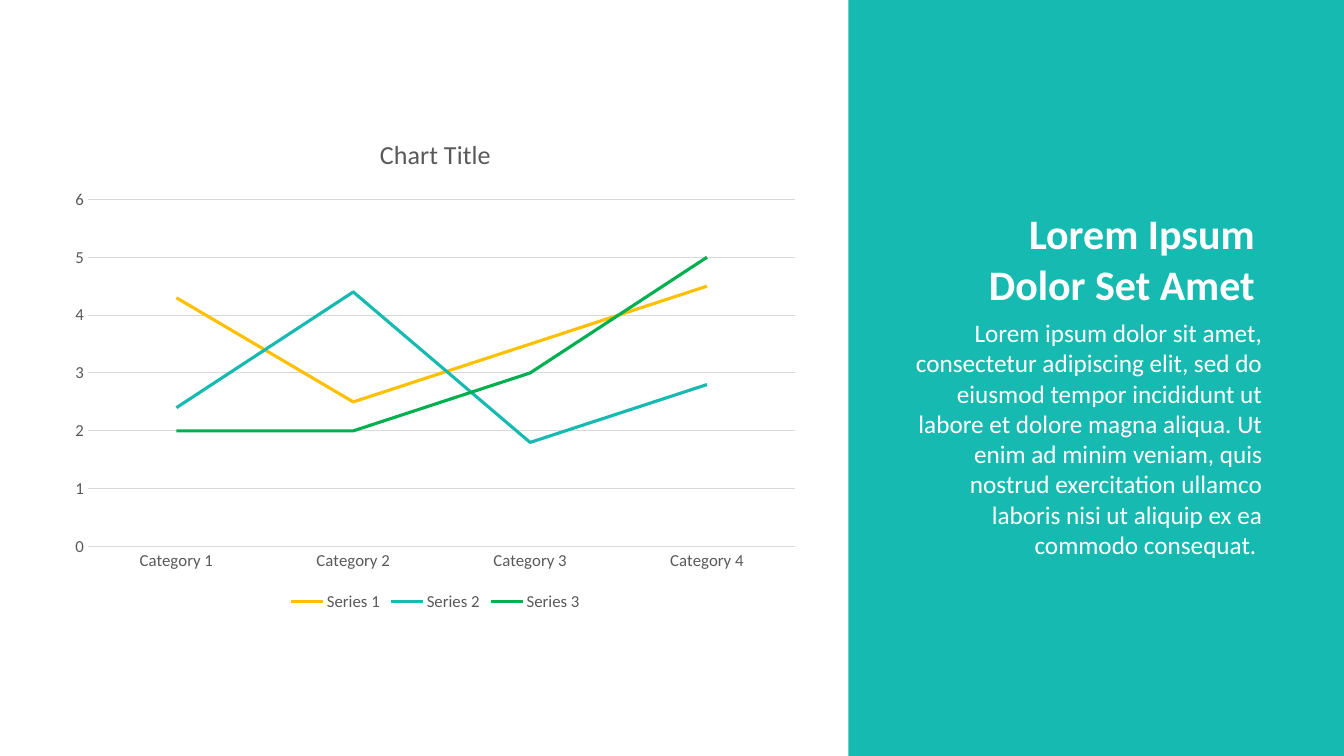
from pptx import Presentation
from pptx.chart.data import CategoryChartData
from pptx.dml.color import RGBColor
from pptx.enum.chart import XL_CHART_TYPE, XL_LEGEND_POSITION, XL_TICK_MARK
from pptx.enum.shapes import MSO_SHAPE
from pptx.enum.text import MSO_ANCHOR, MSO_AUTO_SIZE, PP_ALIGN
from pptx.util import Pt

LINE_CHART = XL_CHART_TYPE.LINE
LEGEND_BOTTOM = XL_LEGEND_POSITION.BOTTOM
NO_TICKS = XL_TICK_MARK.NONE
RECTANGLE = MSO_SHAPE.RECTANGLE
TOP = MSO_ANCHOR.TOP
FIT_SHAPE = MSO_AUTO_SIZE.SHAPE_TO_FIT_TEXT
RIGHT = PP_ALIGN.RIGHT

FONT = "Calibri"
COLORS = {
    "teal": "17BAB1",
    "yellow": "FFC000",
    "green": "00B050",
    "white": "FFFFFF",
    "label": "595959",
    "grid": "D9D9D9",
}
SLIDE_WIDTH, SLIDE_HEIGHT = 960, 540
PANEL_LEFT = 606

CATEGORIES = [f"Category {number}" for number in range(1, 5)]
SERIES = [
    ("Series 1", (4.3, 2.5, 3.5, 4.5), "yellow"),
    ("Series 2", (2.4, 4.4, 1.8, 2.8), "teal"),
    ("Series 3", (2, 2, 3, 5), "green"),
]
HEADING = ["Lorem Ipsum", "Dolor Set Amet"]
BODY = [
    "Lorem ipsum dolor sit amet, consectetur adipiscing elit, sed do eiusmod "
    "tempor incididunt ut labore et dolore magna aliqua. Ut enim ad minim "
    "veniam, quis nostrud exercitation ullamco laboris nisi ut aliquip ex ea "
    "commodo consequat. "
]


def rgb(name):
    return RGBColor.from_string(COLORS[name])


def style_font(font, size, color, bold=False):
    font.name = FONT
    font.size = Pt(size)
    font.bold = bold
    font.color.rgb = rgb(color)


def style_line(line, color, width):
    line.color.rgb = rgb(color)
    line.width = Pt(width)


def write_right_aligned(shape, paragraphs, size, bold=False, wrap=True):
    frame = shape.text_frame
    frame.text = "\n".join(paragraphs)
    frame.word_wrap = wrap
    frame.auto_size = FIT_SHAPE
    frame.vertical_anchor = TOP
    for paragraph in frame.paragraphs:
        paragraph.alignment = RIGHT
        style_font(paragraph.font, size, "white", bold)


def add_line_chart(slide, left, top, width, height):
    data = CategoryChartData()
    data.categories = CATEGORIES
    for name, values, _ in SERIES:
        data.add_series(name, values)
    chart = slide.shapes.add_chart(
        LINE_CHART, Pt(left), Pt(top), Pt(width), Pt(height), data
    ).chart
    style_font(chart.font, 12, "label")

    # Title and legend
    chart.has_title = True
    chart_title = chart.chart_title
    chart_title.include_in_layout = False
    chart_title.text_frame.text = "Chart Title"
    style_font(chart_title.text_frame.paragraphs[0].font, 18.6, "label")
    chart.has_legend = True
    chart.legend.position = LEGEND_BOTTOM
    chart.legend.include_in_layout = False

    # Axes
    for axis in (chart.category_axis, chart.value_axis):
        axis.major_tick_mark = NO_TICKS
        axis.minor_tick_mark = NO_TICKS
        style_font(axis.tick_labels.font, 12, "label")
    style_line(chart.category_axis.format.line, "grid", 0.75)
    value_axis = chart.value_axis
    value_axis.minimum_scale = 0
    value_axis.maximum_scale = 6
    value_axis.major_unit = 1
    value_axis.format.line.fill.background()
    style_line(value_axis.major_gridlines.format.line, "grid", 0.75)

    # Series lines
    chart.plots[0].vary_by_categories = False
    for series, (_, _, color) in zip(chart.plots[0].series, SERIES):
        series.smooth = False
        style_line(series.format.line, color, 2.25)


def add_text_panel(slide, left, top, width, height):
    panel = slide.shapes.add_shape(
        RECTANGLE, Pt(left), Pt(top), Pt(width), Pt(height)
    )
    panel.shadow.inherit = False
    panel.fill.solid()
    panel.fill.fore_color.rgb = rgb("teal")
    panel.line.fill.background()

    # Heading, brought in front of the panel
    heading = slide.shapes.title
    panel.element.addnext(heading.element)
    heading.left, heading.top = Pt(left + 91.7), Pt(top + 144.7)
    heading.width, heading.height = Pt(206), Pt(80)
    write_right_aligned(heading, HEADING, 30, bold=True, wrap=False)

    # Body text
    body = slide.shapes.add_textbox(
        Pt(left + 32), Pt(top + 223.2), Pt(270.7), Pt(181.4)
    )
    write_right_aligned(body, BODY, 18)


def main():
    presentation = Presentation()
    presentation.slide_width = Pt(SLIDE_WIDTH)
    presentation.slide_height = Pt(SLIDE_HEIGHT)
    title_only = presentation.slide_layouts[5]
    slide = presentation.slides.add_slide(title_only)
    add_line_chart(slide, 43.2, 82.8, 535.7, 357.1)
    add_text_panel(slide, PANEL_LEFT, 0, SLIDE_WIDTH - PANEL_LEFT, SLIDE_HEIGHT)
    presentation.save("out.pptx")


if __name__ == "__main__":
    main()
